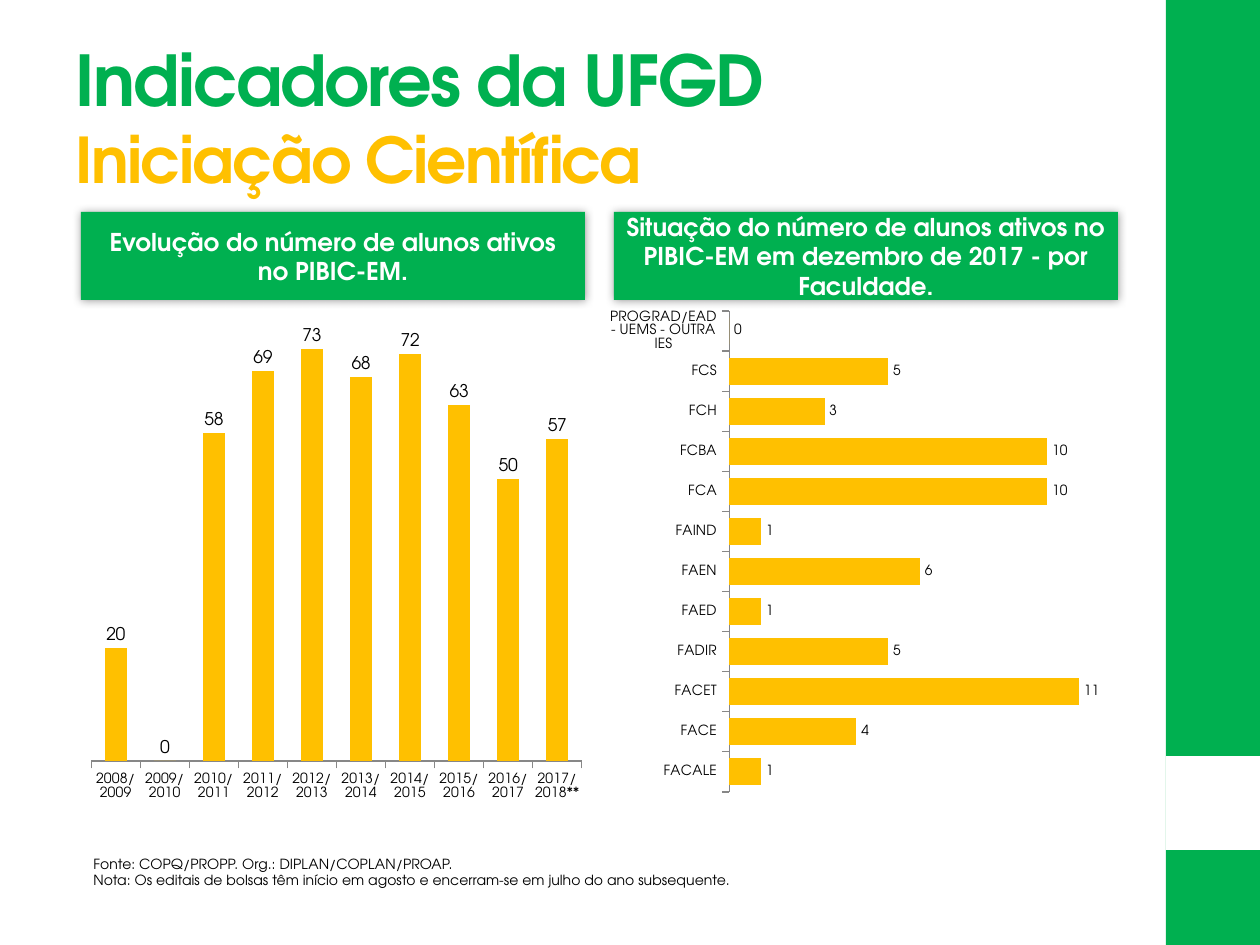
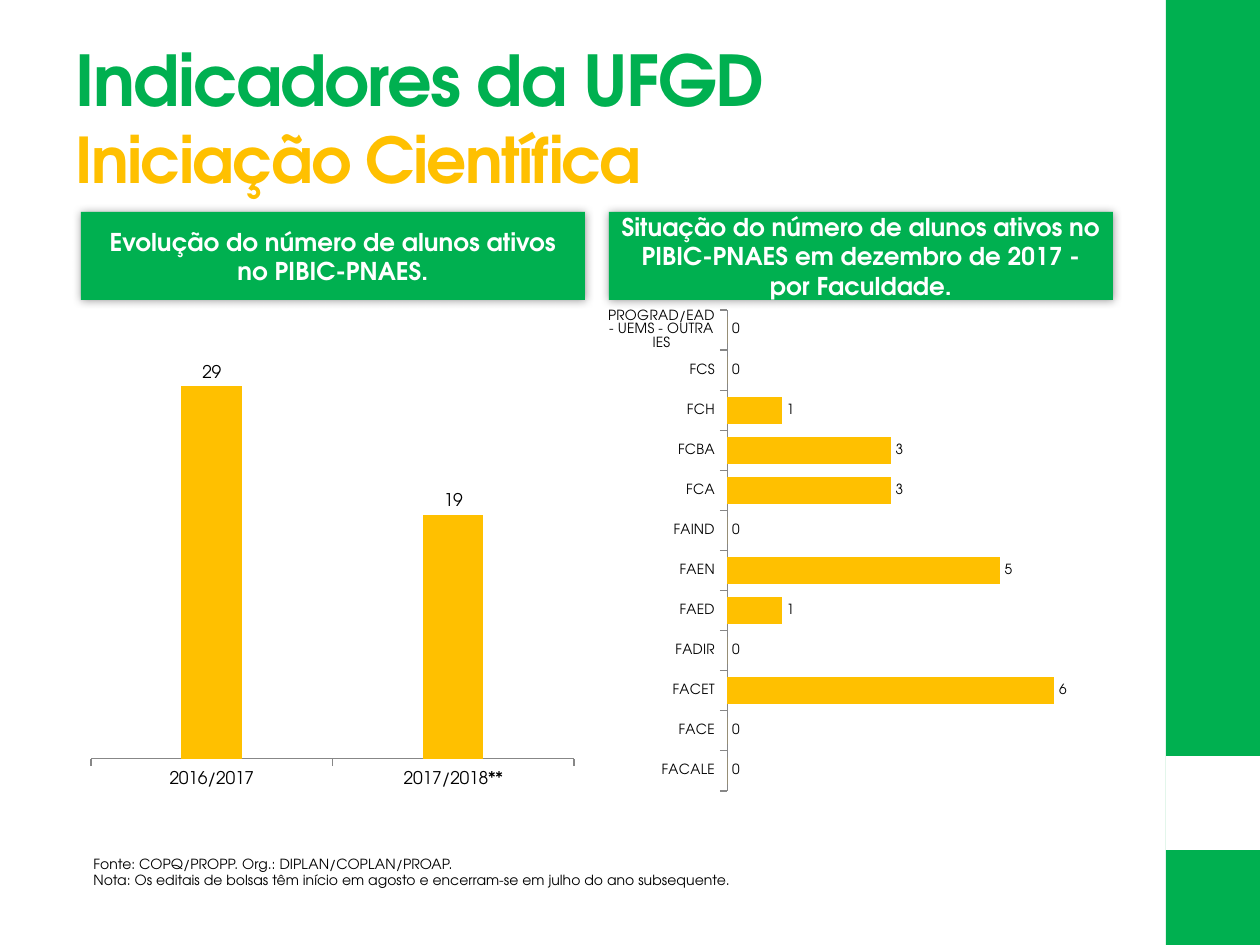
from dataclasses import dataclass

from lxml import etree
from pptx import Presentation
from pptx.chart.data import CategoryChartData
from pptx.dml.color import RGBColor
from pptx.enum.chart import XL_CHART_TYPE, XL_LABEL_POSITION, XL_TICK_MARK
from pptx.enum.shapes import MSO_SHAPE
from pptx.enum.text import MSO_ANCHOR, PP_ALIGN
from pptx.oxml.ns import qn
from pptx.util import Pt

COLUMN, BAR = XL_CHART_TYPE.COLUMN_CLUSTERED, XL_CHART_TYPE.BAR_CLUSTERED
OUTSIDE_END = XL_LABEL_POSITION.OUTSIDE_END
TICK_OUT, TICK_NONE = XL_TICK_MARK.OUTSIDE, XL_TICK_MARK.NONE
RECT, MIDDLE = MSO_SHAPE.RECTANGLE, MSO_ANCHOR.MIDDLE
LEFT, CENTER = PP_ALIGN.LEFT, PP_ALIGN.CENTER
TITLE_ONLY = 5


@dataclass(frozen=True)
class Theme:
    font: str = "TeX Gyre Adventor"
    green: RGBColor = RGBColor(0x00, 0xB0, 0x50)
    amber: RGBColor = RGBColor(0xFF, 0xC0, 0x00)
    white: RGBColor = RGBColor(0xFF, 0xFF, 0xFF)
    black: RGBColor = RGBColor(0x00, 0x00, 0x00)
    axis: RGBColor = RGBColor(0x87, 0x87, 0x87)
    title: int = 40
    subtitle: int = 36
    banner: int = 14
    label: int = 10
    small: int = 8


T = Theme()


def px(*lengths):
    """Lengths in px, 126 to the inch, as EMU."""
    return [round(n * 914400 / 126) for n in lengths]


def style(font, size, color, bold=False):
    font.name, font.size, font.bold = T.font, Pt(size), bold
    font.color.rgb = color


# Content
FACULTIES = ["FACALE", "FACE", "FACET", "FADIR", "FAED", "FAEN", "FAIND", "FCA",
             "FCBA", "FCH", "FCS", "PROGRAD/EAD - UEMS - OUTRA IES"]
TITLE = [("Indicadores da UFGD", T.title, T.green),
         ("Iniciação Científica", T.subtitle, T.amber)]
NOTES = ["Fonte: COPQ/PROPP. Org.: DIPLAN/COPLAN/PROAP.",
         "Nota: Os editais de bolsas têm início em agosto e encerram-se em julho "
         "do ano subsequente."]
YEARS = [f"{y}/{y + 1}" for y in range(2008, 2017)] + ["2017/2018**"]

# Charts: type, box, categories, values, axis maximum, gap, axis size, label size
SLIDES = [
    dict(program="PIBIC-EM", banner_lefts=(81, 614), charts=[
        (COLUMN, (81, 299, 511, 511), YEARS,
         [20, 0, 58, 69, 73, 68, 72, 63, 50, 57], 80, 123, T.small, T.label),
        (BAR, (610, 301, 511, 501), FACULTIES,
         [1, 4, 11, 5, 1, 6, 1, 10, 10, 3, 5, 0], 12, 49, T.small, T.small)]),
    dict(program="PIBIC-PNAES", banner_lefts=(81, 609), charts=[
        (COLUMN, (81, 299, 503, 498), YEARS[-2:],
         [29, 19], 35, 299, T.label, T.label),
        (BAR, (608, 300, 511, 501), FACULTIES,
         [0, 0, 6, 0, 1, 5, 0, 3, 3, 1, 0, 0], 7, 49, T.small, T.small)]),
]

prs = Presentation()
prs.slide_width, prs.slide_height = px(1260, 945)
layout = prs.slide_layouts[TITLE_ONLY]

for number, page in enumerate(SLIDES):
    s = prs.slides.add_slide(layout)

    # Side band, drawn once and moved to the layout
    if number == 0:
        for top, height, color in [(0, 945, T.green), (756, 94, T.white)]:
            band = s.shapes.add_shape(RECT, *px(1166, top, 94, height))
            band.shadow.inherit = False
            band.fill.solid()
            band.fill.fore_color.rgb = color
            band.line.fill.background()
            layout.shapes.element.append(band.element)

    # Title in two colours
    title = s.shapes.title
    title.left, title.top, title.width, title.height = px(63, 38, 1050, 157)
    tf = title.text_frame
    tf.vertical_anchor = MIDDLE
    p = tf.paragraphs[0]
    p.alignment = LEFT
    for i, (text, size, color) in enumerate(TITLE):
        if i:
            p.add_line_break()
        r = p.add_run()
        r.text = text
        style(r.font, size, color, bold=True)
        r.font._element.set("spc", "-100")

    # Banners with a soft shadow
    headings = [f"Evolução do número de alunos ativos no {page['program']}.",
                f"Situação do número de alunos ativos no {page['program']} "
                "em dezembro de 2017 - por Faculdade."]
    for left, heading in zip(page["banner_lefts"], headings):
        banner = s.shapes.add_shape(RECT, *px(left, 212, 504, 88))
        banner.fill.solid()
        banner.fill.fore_color.rgb = T.green
        banner.line.fill.background()
        banner.shadow.inherit = False
        effects = banner.element.spPr.find(qn("a:effectLst"))
        shadow = etree.SubElement(effects, qn("a:outerShdw"), blurRad=str(Pt(5)),
                                  dist="0", dir="0", rotWithShape="0")
        black = etree.SubElement(shadow, qn("a:srgbClr"), val=str(T.black))
        etree.SubElement(black, qn("a:alpha"), val="40000")
        tf = banner.text_frame
        tf.word_wrap = True
        tf.vertical_anchor = MIDDLE
        p = tf.paragraphs[0]
        p.text = heading
        p.alignment = CENTER
        p.space_before = Pt(2.8)
        style(p.font, T.banner, T.white, bold=True)

    # Charts
    for kind, box, cats, vals, top_value, gap, axis_size, label_size in page["charts"]:
        data = CategoryChartData()
        data.categories = cats
        data.add_series("Series 1", vals)
        chart = s.shapes.add_chart(kind, *px(*box), data).chart
        chart.has_title = chart.has_legend = False
        style(chart.font, T.label, T.black)

        values = chart.value_axis
        values.visible = values.has_major_gridlines = False
        values.minimum_scale, values.maximum_scale = 0, top_value

        axis = chart.category_axis
        axis.major_tick_mark, axis.minor_tick_mark = TICK_OUT, TICK_NONE
        axis.format.line.color.rgb = T.axis
        axis.format.line.width = Pt(0.75)
        style(axis.tick_labels.font, axis_size, T.black)

        plot = chart.plots[0]
        plot.gap_width = gap
        plot.vary_by_categories = False
        fill = plot.series[0].format.fill
        fill.solid()
        fill.fore_color.rgb = T.amber
        plot.has_data_labels = True
        labels = plot.data_labels
        labels.show_value = True
        labels.position = OUTSIDE_END
        style(labels.font, label_size, T.black)

    # Source and note
    tf = s.shapes.add_textbox(*px(81, 849, 1056, 54)).text_frame
    tf.word_wrap = True
    for i, note in enumerate(NOTES):
        p = tf.add_paragraph() if i else tf.paragraphs[0]
        p.text = note
        style(p.font, T.small, T.black)

prs.save("out.pptx")
